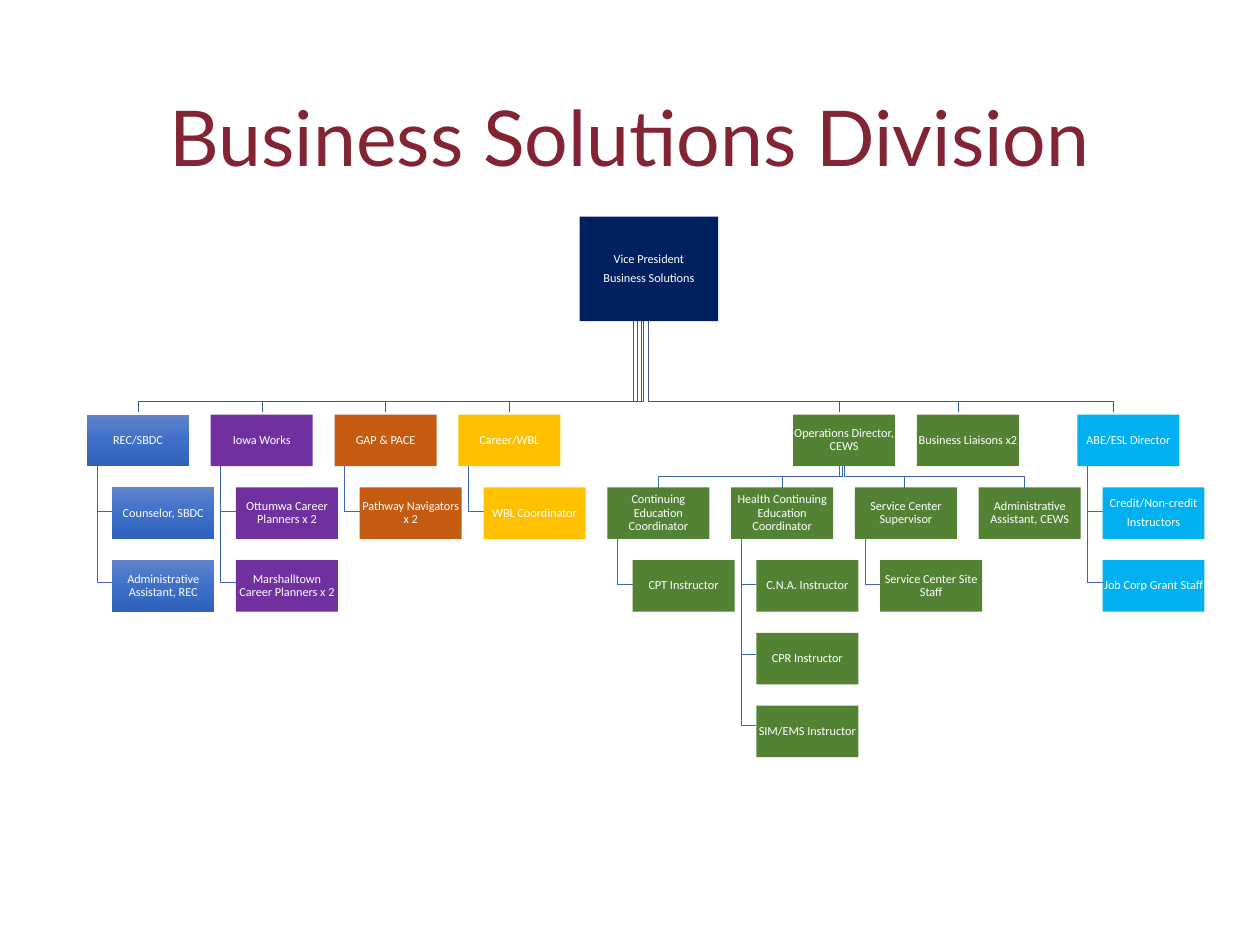
from copy import deepcopy
from dataclasses import dataclass

from pptx import Presentation
from pptx.dml.color import RGBColor
from pptx.enum.shapes import MSO_SHAPE
from pptx.enum.text import MSO_ANCHOR, MSO_AUTO_SIZE, PP_ALIGN
from pptx.oxml.ns import qn
from pptx.util import Inches, Pt

RECT = MSO_SHAPE.RECTANGLE
MIDDLE = MSO_ANCHOR.MIDDLE
NO_FIT = MSO_AUTO_SIZE.NONE
CENTER = PP_ALIGN.CENTER


@dataclass(frozen=True)
class Theme:
    title: str = "822433"
    text: str = "FFFFFF"
    navy: str = "002060"
    blue: tuple = ("6183CB", "3E70CA", "3062BB")
    purple: str = "7030A0"
    orange: str = "C55A11"
    gold: str = "FFC000"
    green: str = "548235"
    cyan: str = "00B0F0"
    trunk: str = "365B9D"
    branch: str = "3E67B2"
    title_font: str = "Lato"
    box_font: str = "Calibri"
    title_size: int = 44
    box_size: int = 7


T = Theme()

# Grid: nine staff columns, five rows; heads sit one indent to the left
BOX_W, BOX_H = 0.81, 0.41
LEFT, TOP = 0.89, 3.29
COL, ROW = 7.86 / 8, 2.31 / 4
INDENT = 0.2

prs = Presentation()
prs.slide_width, prs.slide_height = Inches(10), Inches(7.5)
s = prs.slides.add_slide(prs.slide_layouts[5])


def add_box(x, y, w, h, fill, text):
    sp = s.shapes.add_shape(RECT, Inches(x), Inches(y), Inches(w), Inches(h))
    sp.shadow.inherit = False
    sp.line.fill.background()
    if isinstance(fill, tuple):
        sp.fill.gradient()
        sp.fill.gradient_angle = 270
        stops = sp._element.spPr.find(qn("a:gradFill")).find(qn("a:gsLst"))
        stops.insert(1, deepcopy(stops[0]))
        for stop, position, color in zip(sp.fill.gradient_stops, (0, 0.5, 1), fill):
            stop.position = position
            stop.color.rgb = RGBColor.from_string(color)
    else:
        sp.fill.solid()
        sp.fill.fore_color.rgb = RGBColor.from_string(fill)
    tf = sp.text_frame
    tf.margin_left = tf.margin_right = tf.margin_top = tf.margin_bottom = 0
    tf.word_wrap = True
    tf.vertical_anchor = MIDDLE
    tf.text = text
    for p in tf.paragraphs:
        p.alignment = CENTER
        p.line_spacing = 0.9
        p.space_after = Pt(2.9)
        p.font.name = T.box_font
        p.font.size = Pt(T.box_size)
        p.font.color.rgb = RGBColor.from_string(T.text)


def add_elbow(color, *points):
    points = [(Inches(x), Inches(y)) for x, y in points]
    builder = s.shapes.build_freeform(*points[0])
    builder.add_line_segments(points[1:], close=False)
    sp = builder.convert_to_shape()
    sp.shadow.inherit = False
    sp.fill.background()
    sp.line.color.rgb = RGBColor.from_string(color)
    sp.line.width = Pt(0.5)


# Title
title = s.shapes.title
title.left, title.top = Inches(0.69), Inches(0.4)
title.width, title.height = Inches(8.62), Inches(1.45)
tf = title.text_frame
tf.auto_size = NO_FIT
tf.word_wrap = True
tf.vertical_anchor = MIDDLE
tf.text = "Business Solutions Division"
p = tf.paragraphs[0]
p.alignment = CENTER
p.line_spacing = 0.9
r = p.runs[0]
r.font.name = T.title_font
r.font.size = Pt(T.title_size)
r.font.color.rgb = RGBColor.from_string(T.title)

# Lines down to each level: (start x, child x)
vp_lines = [(5.03, 1.1), (5.06, 2.08), (5.09, 3.06), (5.11, 4.04),
            (5.15, 6.66), (5.15, 7.61), (5.15, 8.84)]
director_lines = [(6.66, 5.23), (6.69, 6.21), (6.7, 7.18), (6.7, 8.13)]
levels = [(T.trunk, vp_lines, 2.55, 3.19, 3.27),
          (T.branch, director_lines, 3.7, 3.78, 3.87)]
for color, lines, y1, y2, y3 in levels:
    for x1, x2 in lines:
        add_elbow(color, (x1, y1), (x1, y2), (x2, y2), (x2, y3))

# Vice president
add_box(4.6, 1.72, 1.1, 0.83, T.navy, "Vice President\nBusiness Solutions")

# Units: column, row, indented left, colour, head, staff hanging below
units = [
    (0, 0, True, T.blue, "REC/SBDC",
     ["Counselor, SBDC", "Administrative Assistant, REC"]),
    (1, 0, True, T.purple, "Iowa Works",
     ["Ottumwa Career Planners x 2", "Marshalltown Career Planners x 2"]),
    (2, 0, True, T.orange, "GAP & PACE", ["Pathway Navigators x 2"]),
    (3, 0, True, T.gold, "Career/WBL", ["WBL Coordinator"]),
    (5.5, 0, False, T.green, "Operations Director, CEWS", []),
    (6.5, 0, False, T.green, "Business Liaisons x2", []),
    (8, 0, True, T.cyan, "ABE/ESL Director",
     ["Credit/Non-credit\nInstructors", "Job Corp Grant Staff"]),
    (4, 1, False, T.green, "Continuing Education Coordinator", ["CPT Instructor"]),
    (5, 1, False, T.green, "Health Continuing Education Coordinator",
     ["C.N.A. Instructor", "CPR Instructor", "SIM/EMS Instructor"]),
    (6, 1, False, T.green, "Service Center Supervisor", ["Service Center Site Staff"]),
    (7, 1, False, T.green, "Administrative Assistant, CEWS", []),
]
for col, row, indented, fill, head, staff in units:
    x = LEFT + col * COL - (INDENT if indented else 0)
    y = TOP + row * ROW
    bottom = y + BOX_H
    for i, name in enumerate(staff):
        elbow_y = bottom + 0.36 + i * 0.56
        add_elbow(T.branch, (x + 0.08, bottom), (x + 0.08, elbow_y), (x + INDENT, elbow_y))
        add_box(x + INDENT, y + (i + 1) * ROW, BOX_W, BOX_H, fill, name)
    add_box(x, y, BOX_W, BOX_H, fill, head)

prs.save("out.pptx")
